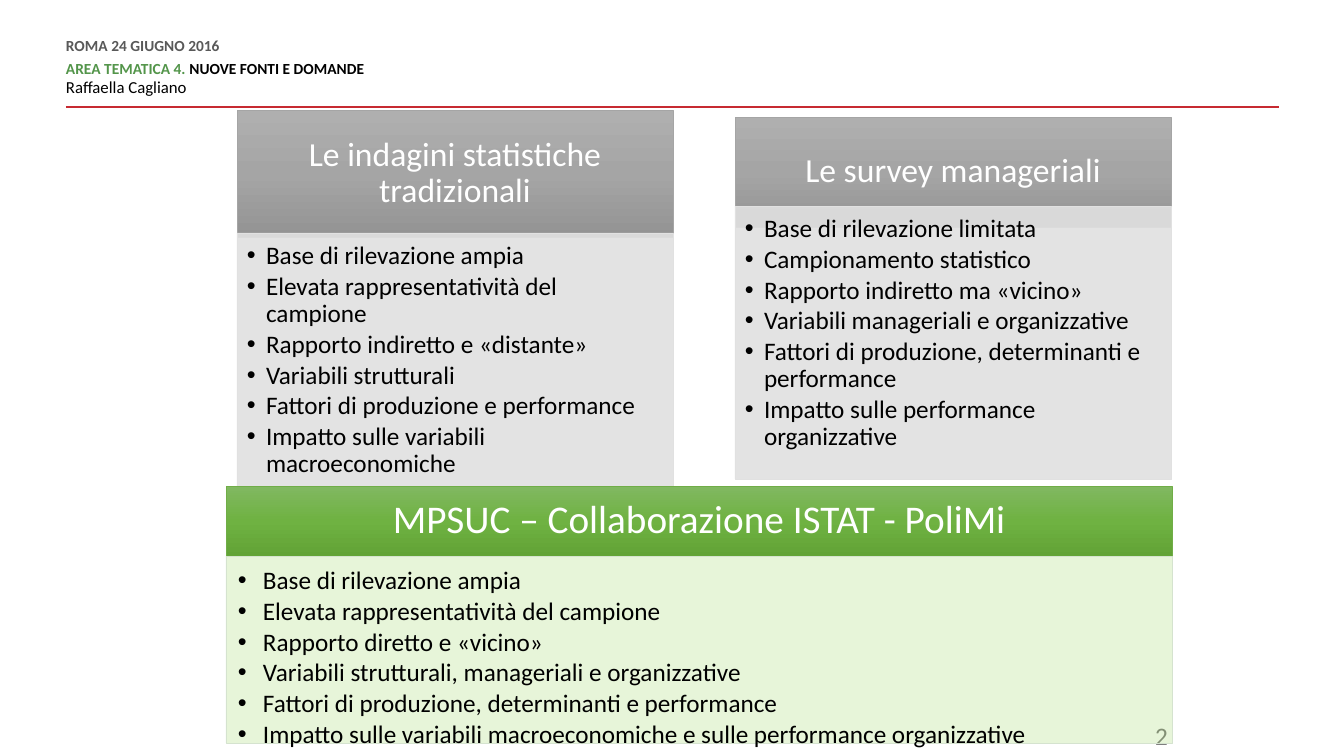
import copy
import lxml.etree
import pptx
import pptx.dml.color
import pptx.enum.shapes
import pptx.enum.text
import pptx.oxml.ns
import pptx.util

PX = 914400 / 100.8
Pt = pptx.util.Pt
qn = pptx.oxml.ns.qn
ALIGN = pptx.enum.text.PP_ALIGN
ANCHOR = pptx.enum.text.MSO_ANCHOR
FIT = pptx.enum.text.MSO_AUTO_SIZE

# Colours and type sizes
THEME = {
    "font": "Calibri", "ink": "000000", "pale": "FFFFFF", "dim": "595959",
    "page": "7F7F7F", "red": "C72A31", "area": "53954A",
    "grey": {"stops": ["AFAFAF", "A5A5A5", "939393"], "edge": "A5A5A5",
             "fill": "E1E1E1", "rim": "E1E1E1", "alpha": 90},
    "green": {"stops": ["81B861", "6FB242", "62A336"], "edge": "70AD47",
              "fill": "92D050", "rim": "D5E3CF", "alpha": 21},
    "small": 11, "name": 12, "list": 18, "head": 24, "main": 28,
}


def px(n):
    return round(n * PX)


def rgb(code):
    return pptx.dml.color.RGBColor.from_string(code)


def put(obj, fmt):
    for key, val in fmt.items():
        setattr(obj, key, val)


def place(shape, box):
    put(shape, dict(zip(("left", "top", "width", "height"), map(px, box))))


def frame(shape, pads, anchor=ANCHOR.TOP):
    text = shape.text_frame
    put(text, {"word_wrap": True, "auto_size": FIT.NONE,
               "vertical_anchor": anchor})
    sides = ("margin_left", "margin_top", "margin_right", "margin_bottom")
    put(text, dict(zip(sides, map(px, pads))))
    return text


def write(text, num, parts, size, fmt, bold=False):
    """Fill paragraph num with (words, colour) parts."""
    para = text.paragraphs[0] if num == 0 else text.add_paragraph()
    put(para, {"space_before": Pt(0), "space_after": Pt(0), **fmt})
    for words, tint in parts:
        run = para.add_run()
        run.text = words
        put(run.font, {"name": THEME["font"], "size": Pt(size), "bold": bold})
        run.font.color.rgb = rgb(tint)
    return para


def edge(shape, tint, width=0.5):
    shape.line.color.rgb = rgb(tint)
    shape.line.width = Pt(width)


def shade(shape, tints):
    fill = shape.fill
    fill.gradient()
    fill.gradient_angle = 270
    stops = shape.element.spPr.find(".//" + qn("a:gsLst"))
    stops.append(copy.deepcopy(stops[-1]))
    for num, (stop, tint) in enumerate(zip(fill.gradient_stops, tints)):
        stop.color.rgb = rgb(tint)
        stop.position = num / 2


def veil(shape, tint, alpha):
    shape.fill.solid()
    shape.fill.fore_color.rgb = rgb(tint)
    clr = shape.element.spPr.find(".//" + qn("a:srgbClr"))
    lxml.etree.SubElement(clr, qn("a:alpha")).set("val", str(alpha * 1000))


def bullet(para, indent):
    props = para._p.get_or_add_pPr()
    props.set("marL", str(px(indent)))
    props.set("indent", str(-px(indent)))
    lxml.etree.SubElement(props, qn("a:buFont")).set("typeface", "Arial")
    lxml.etree.SubElement(props, qn("a:buChar")).set("char", "•")


# Page header: date, area, speaker and rule
def header(slide, box):
    x, y, wide, high = box
    note = slide.shapes.add_textbox(0, 0, 0, 0)
    place(note, (x, y, 841, 59))
    text = frame(note, (0, 0, 0, 0))
    ink, tight = THEME["ink"], {"line_spacing": Pt(10.8)}
    write(text, 0, [("ROMA 24 GIUGNO 2016", THEME["dim"])], THEME["small"],
          {**tight, "space_after": Pt(6)}, True)
    write(text, 1, [("AREA TEMATICA 4. ", THEME["area"]),
                    ("NUOVE FONTI E DOMANDE", ink)],
          THEME["small"], tight, True)
    write(text, 2, [("Raffaella Cagliano", ink)], THEME["name"],
          {**tight, "space_before": Pt(3)})
    rule = slide.shapes.add_connector(
        pptx.enum.shapes.MSO_CONNECTOR.STRAIGHT,
        px(x), px(y + high), px(x + wide), px(y + high))
    edge(rule, THEME["red"], 2)
    lxml.etree.SubElement(rule.element.spPr, qn("a:effectLst"))


# Page number
def number(slide, box):
    note = slide.shapes.add_textbox(0, 0, 0, 0)
    place(note, box)
    write(frame(note, (10, 5, 10, 5)), 0, [("2", THEME["page"])],
          THEME["list"], {"alignment": ALIGN.RIGHT})


# Panel: shaded heading, with a list that starts drop px below its top
def panel(head, body, box, tall, drop, look, title, size, items, pad, indent):
    x, y, wide, high = box
    for shape in (head, body):
        shape.element.getparent().append(shape.element)
    place(head, (x, y, wide, tall))
    place(body, (x, y + drop, wide, high - drop))
    shade(head, look["stops"])
    edge(head, look["edge"])
    veil(body, look["fill"], look["alpha"])
    edge(body, look["rim"])
    text = frame(head, (20, 11, 20, 11), ANCHOR.MIDDLE)
    write(text, 0, [(title, THEME["pale"])], size,
          {"alignment": ALIGN.CENTER, "line_spacing": 0.9})
    text = frame(body, (pad, pad, pad + 4, pad + 6))
    for num, item in enumerate(items):
        para = write(text, num, [(item, THEME["ink"])], THEME["list"],
                     {"alignment": ALIGN.LEFT, "line_spacing": 0.9,
                      "space_after": Pt(2.5)})
        bullet(para, indent)


def main():
    deck = pptx.Presentation()
    put(deck, {"slide_width": px(1344), "slide_height": px(756)})
    slide = deck.slides.add_slide(deck.slide_layouts[4])
    hold = slide.placeholders
    header(slide, (66, 39, 1213, 68))
    number(slide, (1098, 715, 80, 35))

    # Two sources side by side
    panel(hold[1], hold[2], (237, 110, 436, 395), 127, 123, THEME["grey"],
          "Le indagini statistiche tradizionali", THEME["head"],
          ["Base di rilevazione ampia",
           "Elevata rappresentatività del campione",
           "Rapporto indiretto e «distante»",
           "Variabili strutturali",
           "Fattori di produzione e performance",
           "Impatto sulle variabili macroeconomiche"], 10, 19)
    panel(hold[3], hold[4], (735, 117, 436, 362), 110, 89, THEME["grey"],
          "Le survey manageriali", THEME["head"],
          ["Base di rilevazione limitata",
           "Campionamento statistico",
           "Rapporto indiretto ma «vicino»",
           "Variabili manageriali e organizzative",
           "Fattori di produzione, determinanti e performance",
           "Impatto sulle performance organizzative"], 10, 19)

    # Joint project below
    joint = slide.shapes.add_shape(
        pptx.enum.shapes.MSO_SHAPE.RECTANGLE, 0, 0, 0, 0)
    joint.shadow.inherit = False
    panel(hold[0], joint, (226, 486, 946, 257), 70, 70, THEME["green"],
          "MPSUC – Collaborazione ISTAT - PoliMi", THEME["main"],
          ["Base di rilevazione ampia",
           "Elevata rappresentatività del campione",
           "Rapporto diretto e «vicino»",
           "Variabili strutturali, manageriali e organizzative",
           "Fattori di produzione, determinanti e performance",
           "Impatto sulle variabili macroeconomiche e sulle performance "
           "organizzative"], 12, 25)
    deck.save("out.pptx")


if __name__ == "__main__":
    main()
